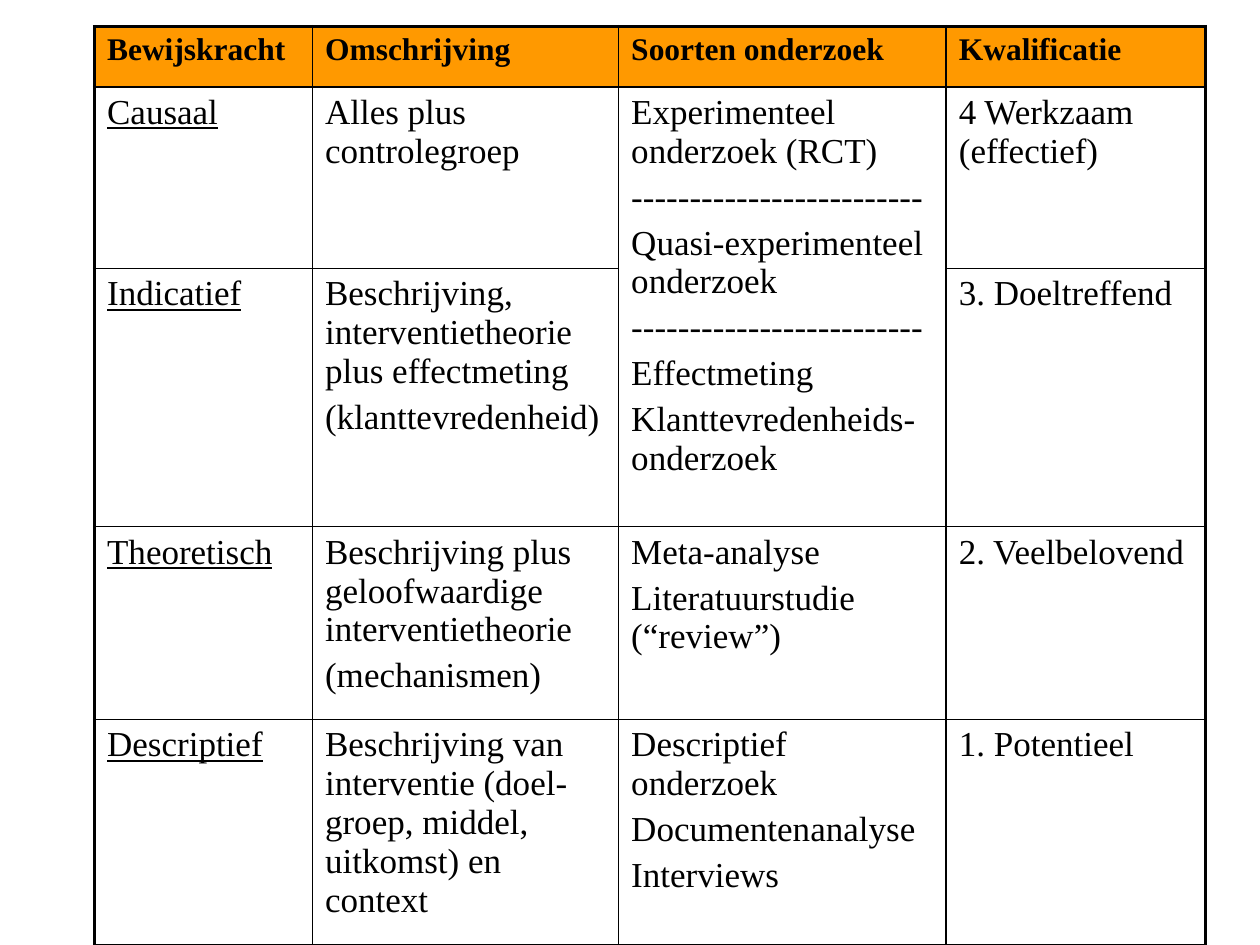
from lxml.etree import SubElement
from pptx import Presentation
from pptx.dml.color import RGBColor
from pptx.oxml.ns import qn
from pptx.util import Inches, Pt

FONT = "Times New Roman"
BLACK, ORANGE = "000000", "FF9900"
COLUMN_WIDTHS = [1.73, 2.43, 2.6, 2.06]
ROW_HEIGHTS = [0.48, 1.44, 2.05, 1.53, 1.8]
DIVIDER = "-" * 25

# One string per cell; each line is a paragraph.
ROWS = [
    ["Bewijskracht", "Omschrijving", "Soorten onderzoek", "Kwalificatie"],
    ["Causaal", "Alles plus controlegroep",
     f"Experimenteel onderzoek (RCT)\n{DIVIDER}\n"
     f"Quasi-experimenteel onderzoek\n{DIVIDER}\n"
     "Effectmeting\nKlanttevredenheids-onderzoek",
     "4 Werkzaam (effectief)"],
    ["Indicatief",
     "Beschrijving, interventietheorie plus effectmeting\n(klanttevredenheid)",
     "", "3. Doeltreffend"],
    ["Theoretisch",
     "Beschrijving plus geloofwaardige interventietheorie\n(mechanismen)",
     "Meta-analyse\nLiteratuurstudie (“review”)", "2. Veelbelovend"],
    ["Descriptief",
     "Beschrijving van interventie (doel-groep, middel, uitkomst) en context",
     "Descriptief onderzoek\nDocumentenanalyse\nInterviews", "1. Potentieel"],
]


def rgb(color):
    return RGBColor.from_string(color)


def add_border(cell, side, width):
    """Draw a solid black border on side L, R, T or B, width in points."""
    line = SubElement(cell._tc.get_or_add_tcPr(), qn(f"a:ln{side}"), w=str(Pt(width)))
    fill = SubElement(line, qn("a:solidFill"))
    SubElement(fill, qn("a:srgbClr"), val=BLACK)


presentation = Presentation()
presentation.slide_width = Inches(10)
presentation.slide_height = Inches(7.5)
slide = presentation.slides.add_slide(presentation.slide_layouts[6])

last_row, last_column = len(ROWS) - 1, len(COLUMN_WIDTHS) - 1
table = slide.shapes.add_table(
    len(ROWS), len(COLUMN_WIDTHS), Inches(0.75), Inches(0.21),
    Inches(sum(COLUMN_WIDTHS)), Inches(sum(ROW_HEIGHTS))).table
table.horz_banding = False
table.first_row = False
for column, width in zip(table.columns, COLUMN_WIDTHS):
    column.width = Inches(width)
for row, height in zip(table.rows, ROW_HEIGHTS):
    row.height = Inches(height)
table.cell(1, 2).merge(table.cell(2, 2))

for row_index, texts in enumerate(ROWS):
    is_header = row_index == 0
    size = 18 if is_header else 20
    for column_index, text in enumerate(texts):
        cell = table.cell(row_index, column_index)
        outer_sides = {"L": column_index == 0, "R": column_index == last_column,
                       "T": is_header, "B": row_index == last_row}
        for side, is_outer in outer_sides.items():
            add_border(cell, side, 2.25 if is_outer else 1)
        if is_header:
            cell.fill.solid()
            cell.fill.fore_color.rgb = rgb(ORANGE)
        else:
            cell.fill.background()
        if cell.is_spanned:
            continue

        cell.text_frame.text = text
        for paragraph in cell.text_frame.paragraphs:
            paragraph.space_before = Pt(0.2 * size)
            for run in paragraph.runs:
                run.font.name = FONT
                run.font.size = Pt(size)
                run.font.bold = is_header
                run.font.underline = column_index == 0 and not is_header
                run.font.color.rgb = rgb(BLACK)

presentation.save("out.pptx")
